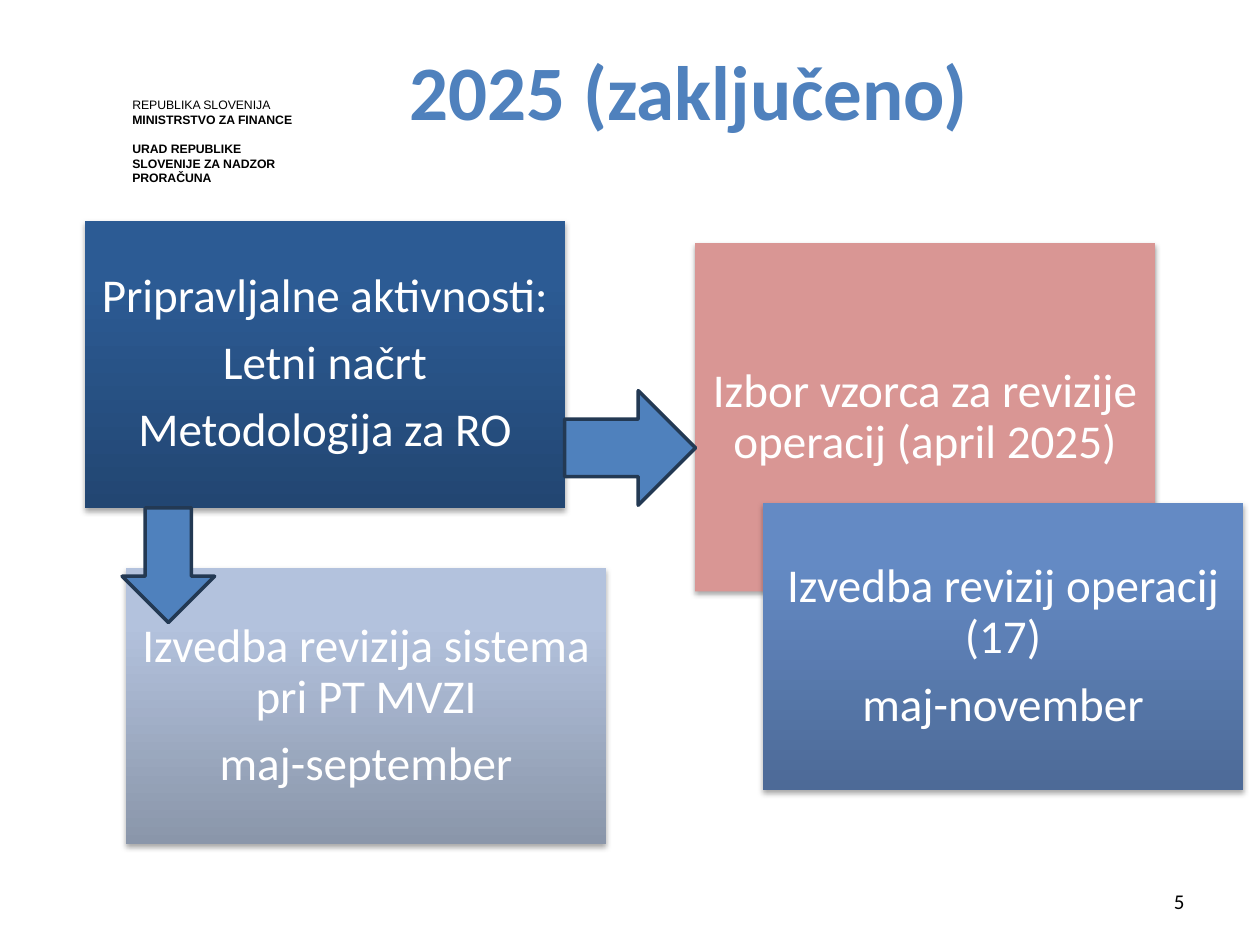
"""Build the slide on the audit activities completed in 2025."""
from copy import deepcopy

from lxml.etree import SubElement
from pptx import Presentation
from pptx.dml.color import RGBColor
from pptx.enum.shapes import MSO_SHAPE
from pptx.enum.text import MSO_ANCHOR, PP_ALIGN
from pptx.oxml.ns import qn
from pptx.util import Pt

COLORS = {
    "black": "000000",
    "white": "FFFFFF",
    "blue": "4F81BD",
    "outline": "233953",
    "rose": "D99694",
}


def add_run(paragraph, text, size, color, font_name="Calibri", bold=False):
    run = paragraph.add_run()
    run.text = text
    run.font.name = font_name
    run.font.size = Pt(size)
    run.font.bold = bold
    run.font.color.rgb = RGBColor.from_string(COLORS[color])


def add_text_box(slide, left, top, width, height, margins=(7.2, 3.6, 7.2, 3.6)):
    text_frame = slide.shapes.add_textbox(Pt(left), Pt(top), Pt(width), Pt(height)).text_frame
    text_frame.word_wrap = True
    text_frame.margin_left, text_frame.margin_top, text_frame.margin_right, text_frame.margin_bottom = map(Pt, margins)
    return text_frame


presentation = Presentation()
presentation.slide_width = Pt(720)
presentation.slide_height = Pt(540)
slide = presentation.slides.add_slide(presentation.slide_layouts[6])

header = add_text_box(slide, 75.6, 55.6, 95, 40.3, margins=(0, 0, 0, 0))
header_lines = [
    ("REPUBLIKA SLOVENIJA", False, 0),
    ("MINISTRSTVO ZA FINANCE", True, 0),
    ("URAD REPUBLIKE SLOVENIJE ZA NADZOR PRORAČUNA", True, 8.4),
]
for index, (text, bold, space_before) in enumerate(header_lines):
    paragraph = header.add_paragraph() if index else header.paragraphs[0]
    paragraph.line_spacing = Pt(8.4)
    if space_before:
        paragraph.space_before = Pt(space_before)
    add_run(paragraph, text, 7, "black", "Arial", bold)

title = add_text_box(slide, 36, 21.6, 648, 90, margins=(75, 3.6, 7.2, 3.6))
title.paragraphs[0].alignment = PP_ALIGN.CENTER
add_run(title.paragraphs[0], "2025 (zaključeno)", 44, "blue", bold=True)

page_number = add_text_box(slide, 516, 500.4, 168, 28.8)
page_number.vertical_anchor = MSO_ANCHOR.MIDDLE
page_number.paragraphs[0].alignment = PP_ALIGN.RIGHT
add_run(page_number.paragraphs[0], "5", 12, "black")

activities = [
    (48.5, 126.2, 274.3, 164, ["224672", "2C5B94", "2A5B96"],
     ["Pripravljalne aktivnosti:", "Letni načrt", "Metodologija za RO"]),
    (397.2, 139, 262.8, 199, [COLORS["rose"]],
     ["Izbor vzorca za revizije operacij (april 2025)"]),
    (72, 324.7, 274.3, 157.5, ["8A96AA", "B3C2DD", "B3C3DF"],
     ["Izvedba revizija sistema pri PT MVZI", "maj-september"]),
    (436, 287.4, 274.3, 164.3, ["4D6A97", "648AC4", "638AC7"],
     ["Izvedba revizij operacij (17)", "maj-november"]),
]
for left, top, width, height, fill_colors, texts in activities:
    shape = slide.shapes.add_shape(MSO_SHAPE.RECTANGLE, Pt(left), Pt(top), Pt(width), Pt(height))
    properties = shape._element.spPr
    if len(fill_colors) == 1:
        shape.fill.solid()
        shape.fill.fore_color.rgb = RGBColor.from_string(fill_colors[0])
    else:
        shape.fill.gradient()
        shape.fill.gradient_angle = 90
        stop_list = properties.find(qn("a:gradFill")).find(qn("a:gsLst"))
        stop_list.append(deepcopy(stop_list[-1]))
        for stop, position, color in zip(shape.fill.gradient_stops, (0, 0.8, 1), fill_colors):
            stop.position = position
            stop.color.rgb = RGBColor.from_string(color)
    shape.line.fill.background()

    shape.shadow.inherit = False
    effects = properties.find(qn("a:effectLst"))
    shadow = SubElement(effects, qn("a:outerShdw"), blurRad=str(Pt(3.1)), dist=str(Pt(1.8)),
                        dir="5400000", rotWithShape="0")
    shadow_color = SubElement(shadow, qn("a:srgbClr"), val=COLORS["black"])
    SubElement(shadow_color, qn("a:alpha"), val="35000")

    text_frame = shape.text_frame
    text_frame.word_wrap = True
    text_frame.vertical_anchor = MSO_ANCHOR.MIDDLE
    text_frame.margin_left = text_frame.margin_right = Pt(8)
    text_frame.margin_top = text_frame.margin_bottom = Pt(8)
    for index, text in enumerate(texts):
        paragraph = text_frame.add_paragraph() if index else text_frame.paragraphs[0]
        paragraph.alignment = PP_ALIGN.CENTER
        paragraph.line_spacing = 0.9
        if index < len(texts) - 1:
            paragraph.space_after = Pt(9.4)
        add_run(paragraph, text, 26.9, "white")

arrows = [
    (MSO_SHAPE.RIGHT_ARROW, 322.6, 223.2, 74.9, 65.5),
    (MSO_SHAPE.DOWN_ARROW, 69.8, 290.2, 52.9, 65.5),
]
for arrow_type, left, top, width, height in arrows:
    arrow = slide.shapes.add_shape(arrow_type, Pt(left), Pt(top), Pt(width), Pt(height))
    arrow.shadow.inherit = False
    arrow.fill.solid()
    arrow.fill.fore_color.rgb = RGBColor.from_string(COLORS["blue"])
    arrow.line.color.rgb = RGBColor.from_string(COLORS["outline"])
    arrow.line.width = Pt(2)

presentation.save("out.pptx")
